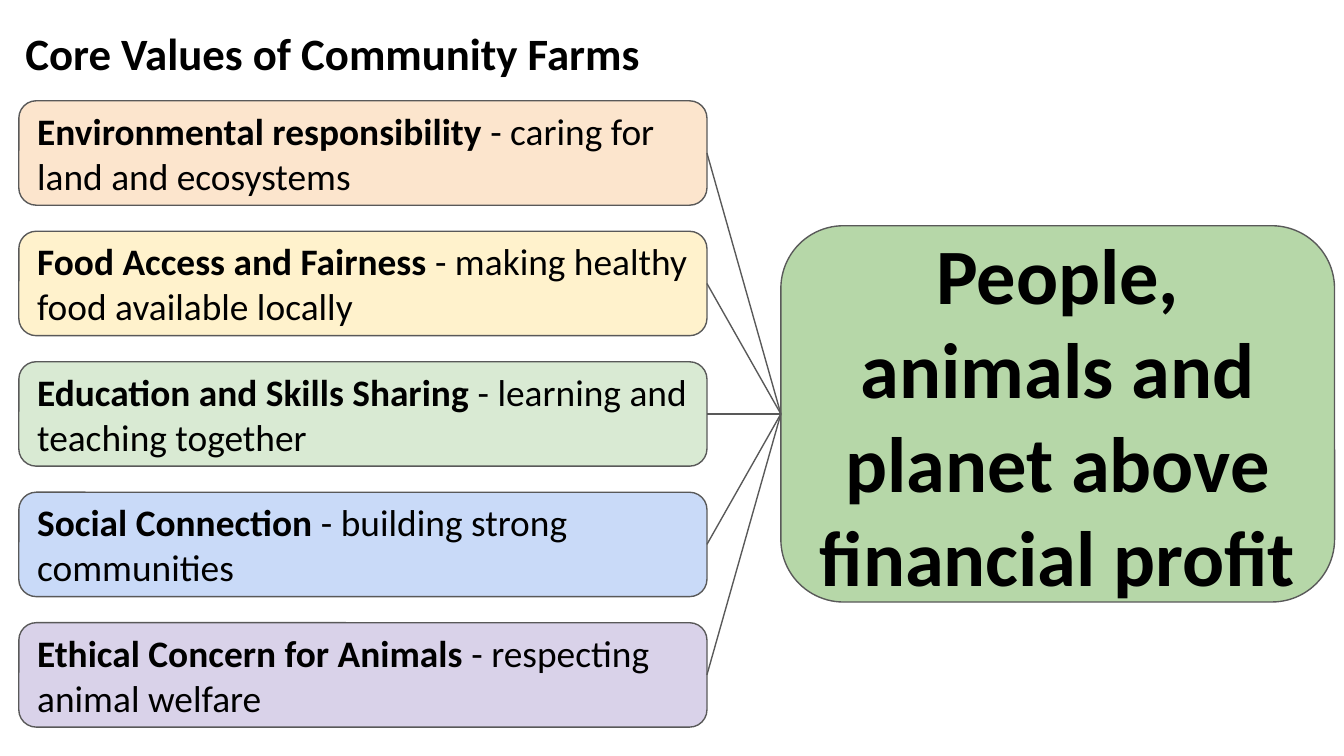
from pptx import Presentation
from pptx.dml.color import RGBColor
from pptx.enum.shapes import MSO_CONNECTOR as Connector, MSO_SHAPE as Shape
from pptx.enum.text import MSO_ANCHOR as Anchor, PP_ALIGN as Align
from pptx.oxml.ns import qn
from pptx.util import Inches, Pt
from lxml.etree import SubElement

WIDTH = 10
HEIGHT = WIDTH * 9 / 16
FONT = "Calibri"
TOP, LEFT, BOTTOM, RIGHT = range(4)
COLOURS = {
    "text": "000000",
    "line": "595959",
    "environment": "FCE5CD",
    "food": "FFF2CC",
    "education": "D9EAD3",
    "social": "C9DAF8",
    "animals": "D9D2E9",
    "purpose": "B6D7A8",
}
VALUES = [
    ("environment", "Environmental responsibility", "caring for land and ecosystems"),
    ("food", "Food Access and Fairness", "making healthy food available locally"),
    ("education", "Education and Skills Sharing", "learning and teaching together"),
    ("social", "Social Connection", "building strong communities"),
    ("animals", "Ethical Concern for Animals", "respecting animal welfare"),
]
# Regions as (left, top, width, height) in inches
TITLE_BOX = (0.09, 0.09, 9.41, 0.61)
VALUES_BOX = (0.14, 0.75, 5.12, 4.66)
PURPOSE_BOX = (5.81, 1.68, 4.12, 2.8)
CARD_SHARE = 0.8  # card height as a share of the row pitch


def colour(name):
    return RGBColor.from_string(COLOURS[name])


def prepare_text(shape, size, bold=None):
    """Set the shape's margins and first paragraph font; return that paragraph."""
    frame = shape.text_frame
    frame.word_wrap = True
    frame.margin_left = frame.margin_right = Inches(0.1)
    frame.margin_top = frame.margin_bottom = Inches(0.1)
    paragraph = frame.paragraphs[0]
    paragraph.alignment = Align.LEFT
    font = paragraph.font
    font.name, font.size, font.bold = FONT, Pt(size), bold
    font.color.rgb = colour("text")
    return paragraph


def add_rounded_box(slide, box, fill):
    shape = slide.shapes.add_shape(Shape.ROUNDED_RECTANGLE, *map(Inches, box))
    shape.shadow.inherit = False
    shape.fill.solid()
    shape.fill.fore_color.rgb = colour(fill)
    shape.line.color.rgb = colour("line")
    shape.line.width = Pt(0.75)
    shape.text_frame.vertical_anchor = Anchor.MIDDLE
    return shape


def add_title(slide, box):
    title = slide.shapes.add_textbox(*map(Inches, box))
    prepare_text(title, 24, bold=True).add_run().text = "Core Values of Community Farms"


def add_purpose(slide, box):
    purpose = add_rounded_box(slide, box, "purpose")
    paragraph = prepare_text(purpose, 42, bold=True)
    paragraph.alignment = Align.CENTER
    paragraph.add_run().text = "People, animals and planet above financial profit"
    return purpose


def add_value_cards(slide, box):
    """Stack one card per value, evenly spaced to fill the box."""
    left, top, width, height = box
    pitch = height / (len(VALUES) - 1 + CARD_SHARE)
    cards = []
    for row, (fill, name, meaning) in enumerate(VALUES):
        card_box = (left, top + row * pitch, width, pitch * CARD_SHARE)
        card = add_rounded_box(slide, card_box, fill)
        paragraph = prepare_text(card, 20)
        heading = paragraph.add_run()
        heading.text = f"{name} "
        heading.font.bold = True
        paragraph.add_run().text = f"- {meaning}"
        cards.append(card)
    return cards


def connect(slide, card, purpose):
    connector = slide.shapes.add_connector(Connector.STRAIGHT, 0, 0, 0, 0)
    connector.begin_connect(card, RIGHT)
    connector.end_connect(purpose, LEFT)
    connector.line.color.rgb = colour("line")
    connector.line.width = Pt(0.75)
    SubElement(connector._element.spPr, qn("a:effectLst"))


def main():
    presentation = Presentation()
    presentation.slide_width = Inches(WIDTH)
    presentation.slide_height = Inches(HEIGHT)
    slide = presentation.slides.add_slide(presentation.slide_layouts[6])
    add_title(slide, TITLE_BOX)
    purpose = add_purpose(slide, PURPOSE_BOX)
    for card in add_value_cards(slide, VALUES_BOX):
        connect(slide, card, purpose)
    presentation.save("out.pptx")


if __name__ == "__main__":
    main()
